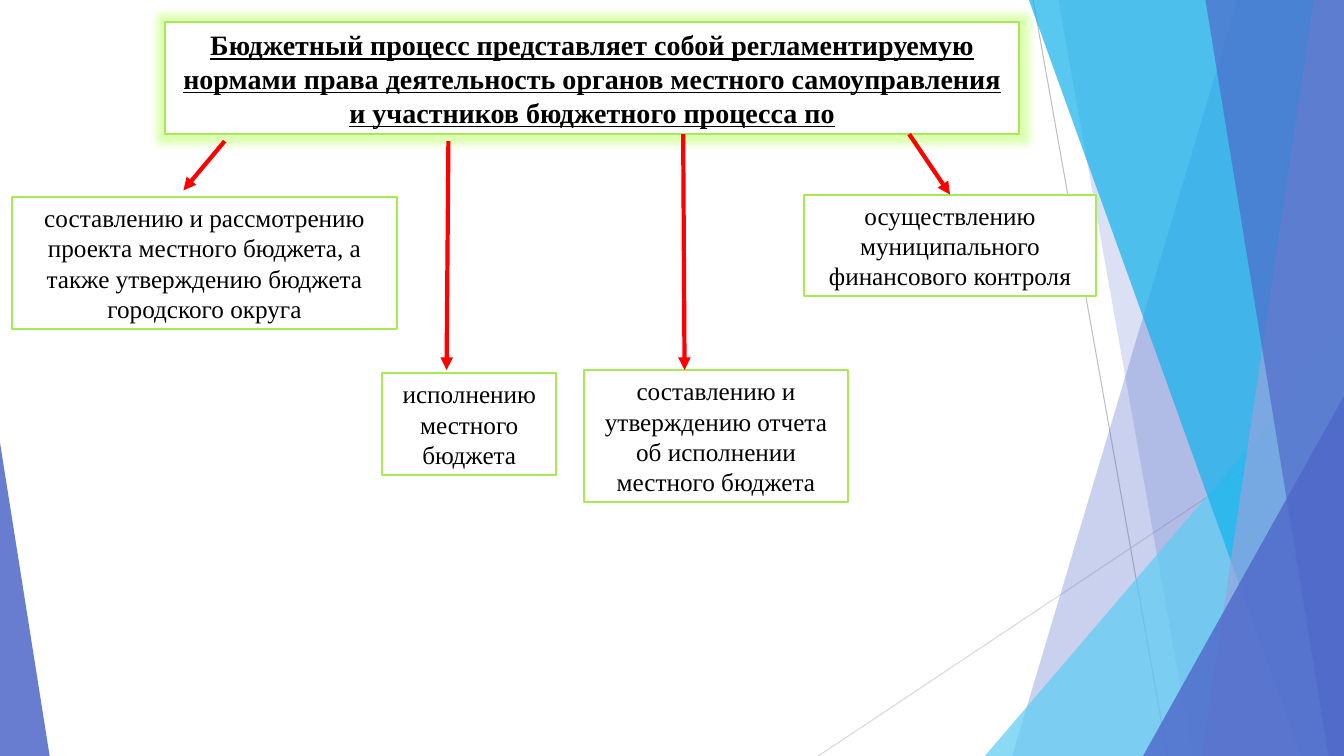
from lxml import etree
from pptx import Presentation
from pptx.dml.color import RGBColor
from pptx.enum import shapes as kinds, text as txt
from pptx.oxml import ns
from pptx.util import Pt

WIDE, HIGH = 960, 540
WHITE = RGBColor(0xFF, 0xFF, 0xFF)
BLACK = RGBColor(0, 0, 0)
LIME = RGBColor(0xA7, 0xEA, 0x52)
RED = RGBColor(0xFF, 0, 0)
GRAY = RGBColor(0xBF, 0xBF, 0xBF)
PALE = RGBColor(0xD9, 0xD9, 0xD9)
BLUE = RGBColor(0x4E, 0x67, 0xC8)
LILAC = RGBColor(0x95, 0xA4, 0xDE)
SKY = RGBColor(0x5E, 0xCC, 0xF3)
CYAN = RGBColor(0x12, 0xB2, 0xEB)

HEAD = ("Бюджетный процесс представляет собой регламентируемую нормами права "
        "деятельность органов местного самоуправления и участников бюджетного процесса по")
STEPS = [
    ("составлению и рассмотрению проекта местного бюджета, а также утверждению "
     "бюджета городского округа", (8.6, 140.5, 275, 94.5)),
    ("исполнению местного бюджета", (273, 266.5, 124.5, 72.7)),
    ("составлению и утверждению отчета об исполнении местного бюджета",
     (417.5, 264.3, 188, 94.5)),
    ("осуществлению муниципального финансового контроля", (574.6, 139, 208, 72.7)),
]
ARROWS = [
    (160.5, 100.8, 131, 136),
    (320.3, 100.8, 319, 264.3),
    (488, 95.8, 489, 264.3),
    (649.4, 95.8, 678.6, 139),
]


def assign(item, values):
    for name, value in values.items():
        setattr(item, name, value)


def add(parent, tag, **attrs):
    return etree.SubElement(parent, ns.qn(tag), attrs)


def tint(shape, color, alpha):
    """Fill without outline; alpha is the opacity in percent."""
    shape.shadow.inherit = False
    shape.fill.solid()
    shape.fill.fore_color.rgb = color
    shape.line.fill.background()
    node = shape.fill._xPr.find(".//" + ns.qn("a:srgbClr"))
    add(node, "a:alpha", val=str(alpha * 1000))


def band(slide, top, base, color, alpha):
    """Facet from a slanted left edge to the right edge of the slide."""
    pen = slide.shapes.build_freeform(Pt(top), 0)
    spots = [(WIDE, 0), (WIDE, HIGH), (base, HIGH)]
    pen.add_line_segments([(Pt(x), Pt(y)) for x, y in spots], close=True)
    tint(pen.convert_to_shape(), color, alpha)


def wedge(slide, left, top, width, apex, color, alpha):
    """Triangle standing on the bottom edge; apex 0 is left, 1 is right."""
    shape = slide.shapes.add_shape(
        kinds.MSO_SHAPE.ISOSCELES_TRIANGLE,
        Pt(left), Pt(top), Pt(width), Pt(HIGH - top))
    shape.adjustments[0] = apex
    tint(shape, color, alpha)


def stroke(slide, ends, color, width):
    line = slide.shapes.add_connector(
        kinds.MSO_CONNECTOR.STRAIGHT, *[Pt(v) for v in ends])
    line.line.color.rgb = color
    line.line.width = Pt(width)
    add(line._element.spPr, "a:effectLst")
    return line


def arrow(slide, ends):
    line = stroke(slide, ends, RED, 3)
    add(line.line._get_or_add_ln(), "a:tailEnd", type="triangle")
    return line


def frame(shape, place, words, size, **style):
    """Place a white box with a lime outline and write centred text in it."""
    names = ("left", "top", "width", "height")
    assign(shape, {n: Pt(v) for n, v in zip(names, place)})
    shape.fill.solid()
    shape.fill.fore_color.rgb = WHITE
    shape.line.color.rgb = LIME
    shape.line.width = Pt(1.5)
    body = shape.text_frame
    body.text = words
    assign(body, {"word_wrap": True,
                  "auto_size": txt.MSO_AUTO_SIZE.SHAPE_TO_FIT_TEXT,
                  "vertical_anchor": txt.MSO_ANCHOR.MIDDLE})
    para = body.paragraphs[0]
    para.alignment = txt.PP_ALIGN.CENTER
    font = para.runs[0].font
    assign(font, {"name": "Times New Roman", "size": Pt(size), **style})
    font.color.rgb = BLACK


def glow(shape, radius, alpha):
    effect = add(shape._element.spPr, "a:effectLst")
    halo = add(effect, "a:glow", rad=str(Pt(radius)))
    color = add(halo, "a:srgbClr", val="A9FF3C")
    add(color, "a:alpha", val=str(alpha * 1000))


def step(slide, words, place):
    box = slide.shapes.add_shape(kinds.MSO_SHAPE.RECTANGLE, 0, 0, 0, 0)
    frame(box, place, words, 18)
    box.shadow.inherit = False
    return box


def decor(slide):
    stroke(slide, (738, 0, 834, HIGH), GRAY, 0.75)
    stroke(slide, (WIDE, 290, 584.5, HIGH), PALE, 0.75)
    band(slide, 884, 723, BLUE, 30)
    band(slide, 756, 852, BLUE, 20)
    wedge(slide, 703.5, 240, 256.5, 1, SKY, 72)
    band(slide, 735, 929.5, CYAN, 70)
    band(slide, 938.5, 858.5, LILAC, 70)
    band(slide, 861, 949, BLUE, 65)
    wedge(slide, 816.5, 283, 143.5, 1, BLUE, 80)
    wedge(slide, 0, 316, 35.5, 0, BLUE, 85)


def main():
    deck = Presentation()
    assign(deck, {"slide_width": Pt(WIDE), "slide_height": Pt(HIGH)})
    slide = deck.slides.add_slide(deck.slide_layouts[5])
    decor(slide)
    title = slide.shapes.title
    frame(title, (118, 16, 610, 80), HEAD, 20, bold=True, underline=True)
    glow(title, 11, 40)
    boxes = [step(slide, *item) for item in STEPS]
    lines = [arrow(slide, ends) for ends in ARROWS]
    lines[-1].end_connect(boxes[-1], 0)
    deck.save("out.pptx")


if __name__ == "__main__":
    main()
